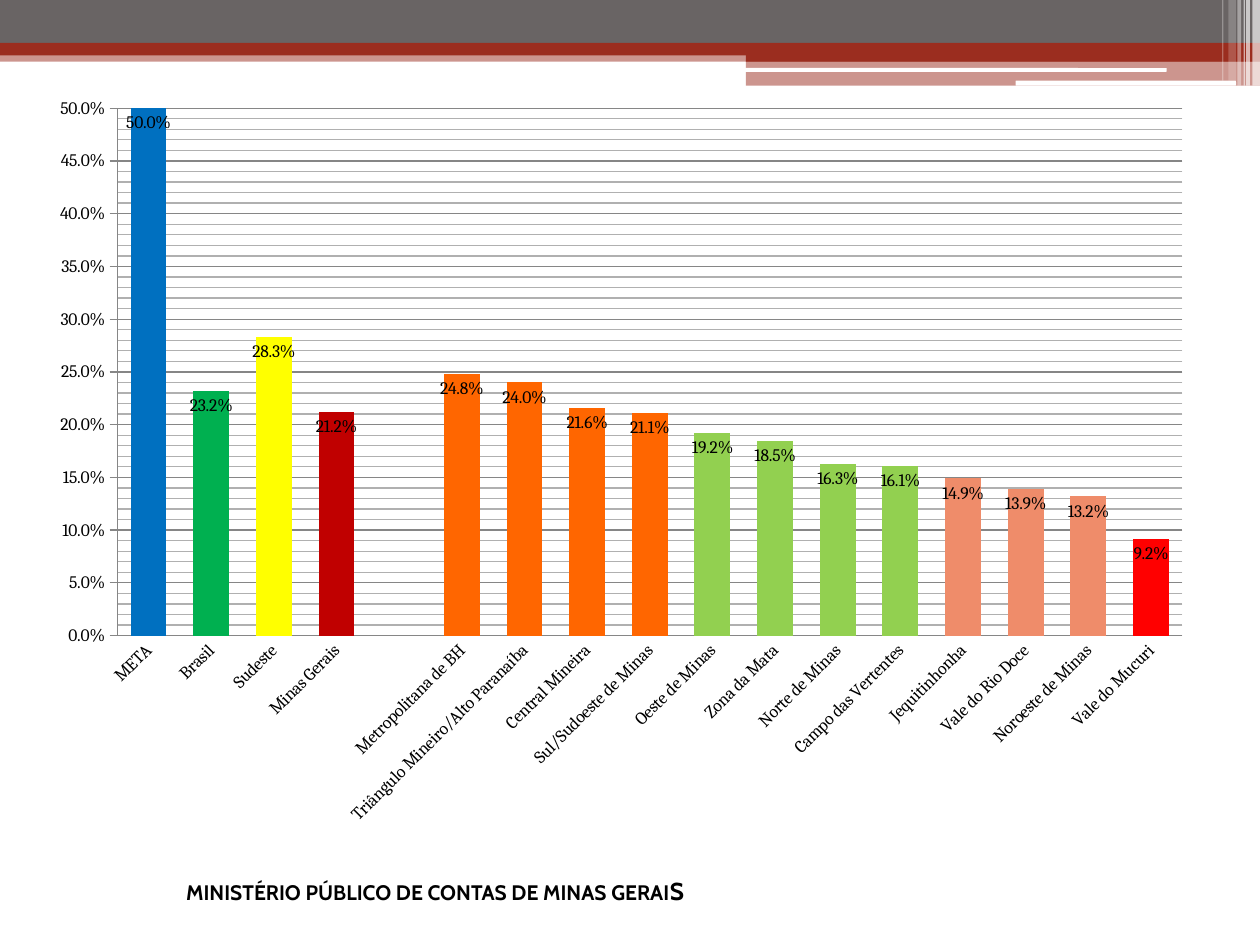
import pptx
import pptx.util
import pptx.oxml
import pptx.oxml.ns
import pptx.chart.data
import pptx.dml.color
import pptx.enum.chart
import pptx.enum.shapes
from dataclasses import dataclass
from pptx.util import Inches


@dataclass(frozen=True)
class Theme:
    gray: str = "696464"
    red: str = "9B2D1F"
    white: str = "FFFFFF"
    black: str = "000000"
    axis: str = "868686"
    minor_grid: str = "B0B0B0"
    chart_font: str = "Cambria"
    footer_font: str = "Cabin"
    chart_size: int = 10
    footer_size: int = 12
    footer_end_size: int = 14


THEME = Theme()

# Content: (region, share, bar colour)
BLUE, GREEN, YELLOW, CRIMSON = "0070C0", "00B050", "FFFF00", "C00000"
ORANGE, LIME, SALMON, RED = "FF6600", "92D050", "EF8C6A", "FF0000"
REGIONS = [
    ("META", 0.5, BLUE),
    ("Brasil", 0.232, GREEN),
    ("Sudeste", 0.283, YELLOW),
    ("Minas Gerais", 0.212, CRIMSON),
    ("", None, ORANGE),
    ("Metropolitana de BH", 0.248, ORANGE),
    ("Triângulo Mineiro/Alto Paranaíba", 0.24, ORANGE),
    ("Central Mineira", 0.216, ORANGE),
    ("Sul/Sudoeste de Minas", 0.211, ORANGE),
    ("Oeste de Minas", 0.192, LIME),
    ("Zona da Mata", 0.185, LIME),
    ("Norte de Minas", 0.163, LIME),
    ("Campo das Vertentes", 0.161, LIME),
    ("Jequitinhonha", 0.149, SALMON),
    ("Vale do Rio Doce", 0.139, SALMON),
    ("Noroeste de Minas", 0.132, SALMON),
    ("Vale do Mucuri", 0.092, RED),
]
FOOTER = [
    ("MINISTÉRIO PÚBLICO DE CONTAS DE MINAS GERAI", THEME.footer_size),
    ("S", THEME.footer_end_size),
]

# Header bands: (left, top, width, height, colour, opacity %, rounded)
BANDS = [
    (0, 0.4, 10, 0.09, THEME.red, 50, False),
    (0, 0, 10, 0.34, THEME.gray, 100, False),
    (0, 0.34, 10, 0.1, THEME.red, 100, False),
    (5.92, 0.39, 4.08, 0.1, THEME.red, 100, False),
    (5.92, 0.48, 4.08, 0.2, THEME.red, 50, False),
    (5.91, 0.54, 3.35, 0.03, THEME.white, 100, True),
    (8.06, 0.64, 1.75, 0.04, THEME.white, 100, True),
]
# Vertical stripes at the right edge: (left, width, height, opacity %)
STRIPES = [
    (9.94, 0.06, 0.68, 65),
    (9.89, 0.03, 0.68, 65),
    (9.87, 0.01, 0.68, 60),
    (9.82, 0.03, 0.68, 40),
    (9.75, 0.06, 0.64, 20),
    (9.7, 0.01, 0.64, 30),
]
# Plot area as fractions of the chart frame
PLOT = {"x": 0.07, "y": 0.03, "w": 0.91, "h": 0.7}


def rgb(value):
    return pptx.dml.color.RGBColor.from_string(value)


def paint(fill, color):
    fill.solid()
    fill.fore_color.rgb = rgb(color)


def style_line(line, color, width=0.75):
    line.color.rgb = rgb(color)
    line.width = pptx.util.Pt(width)


def style_font(font, name, size):
    font.name = name
    font.size = pptx.util.Pt(size)
    font.color.rgb = rgb(THEME.black)


def add_band(page, left, top, width, height, color, opacity, rounded=False):
    kinds = pptx.enum.shapes.MSO_SHAPE
    kind = kinds.ROUNDED_RECTANGLE if rounded else kinds.RECTANGLE
    band = page.shapes.add_shape(kind, *map(Inches, (left, top, width, height)))
    band.shadow.inherit = False
    band.line.fill.background()
    paint(band.fill, color)
    if opacity < 100:
        fill_color = band._element.spPr.find(".//" + pptx.oxml.ns.qn("a:srgbClr"))
        alpha = pptx.oxml.parse_xml(
            f'<a:alpha {pptx.oxml.ns.nsdecls("a")} val="{opacity * 1000}"/>')
        fill_color.append(alpha)


def place_plot(chart):
    area = chart._chartSpace.chart.plotArea
    for old in area.findall(pptx.oxml.ns.qn("c:layout")):
        area.remove(old)
    modes = '<c:xMode val="edge"/><c:yMode val="edge"/>'
    sizes = "".join(f'<c:{key} val="{value}"/>' for key, value in PLOT.items())
    area.insert(0, pptx.oxml.parse_xml(
        f'<c:layout {pptx.oxml.ns.nsdecls("c")}><c:manualLayout>'
        f'<c:layoutTarget val="inner"/>{modes}{sizes}</c:manualLayout></c:layout>'))


def style_minor_grid(axis, color, width=0.75):
    grid = axis._element.find(pptx.oxml.ns.qn("c:minorGridlines"))
    grid.append(pptx.oxml.parse_xml(
        f'<c:spPr {pptx.oxml.ns.nsdecls("c", "a")}>'
        f'<a:ln w="{pptx.util.Pt(width)}"><a:solidFill><a:srgbClr val="{color}"/>'
        '</a:solidFill></a:ln></c:spPr>'))


def add_region_chart(page):
    enums = pptx.enum.chart
    data = pptx.chart.data.CategoryChartData(number_format="0.0%")
    data.categories = [name for name, _, _ in REGIONS]
    data.add_series("Series 1", [share for _, share, _ in REGIONS])
    chart = page.shapes.add_chart(
        enums.XL_CHART_TYPE.COLUMN_STACKED,
        Inches(0.28), Inches(0.68), Inches(9.29), Inches(5.98), data).chart
    chart.has_legend = False
    chart.has_title = False
    style_font(chart.font, THEME.chart_font, THEME.chart_size)
    place_plot(chart)

    # Bars and labels
    plot = chart.plots[0]
    plot.gap_width, plot.overlap = 75, 100
    plot.vary_by_categories = False
    series = plot.series[0]
    paint(series.format.fill, BLUE)
    for index, (_, share, color) in enumerate(REGIONS):
        if share is not None:
            paint(series.points[index].format.fill, color)
    labels = series.data_labels
    labels.show_value = True
    labels.position = enums.XL_LABEL_POSITION.INSIDE_END
    labels.number_format, labels.number_format_is_linked = "0.0%", False
    style_font(labels.font, THEME.chart_font, THEME.chart_size)

    # Axes
    regions, shares = chart.category_axis, chart.value_axis
    for axis in (regions, shares):
        style_line(axis.format.line, THEME.axis)
        style_font(axis.tick_labels.font, THEME.chart_font, THEME.chart_size)
    regions.major_tick_mark = enums.XL_TICK_MARK.NONE
    regions._element.txPr.bodyPr.set("rot", str(-45 * 60000))
    shares.minimum_scale, shares.maximum_scale = 0, 0.5
    shares.major_unit, shares.minor_unit = 0.05, 0.01
    shares.major_tick_mark = enums.XL_TICK_MARK.CROSS
    shares.tick_labels.number_format = "0.0%"
    shares.tick_labels.number_format_is_linked = False
    shares.has_major_gridlines = shares.has_minor_gridlines = True
    style_line(shares.major_gridlines.format.line, THEME.axis)
    style_minor_grid(shares, THEME.minor_grid)


def add_footer(page):
    box = page.shapes.add_textbox(
        Inches(1.38), Inches(6.9), Inches(7.64), Inches(0.34))
    box.text_frame.word_wrap = True
    para = box.text_frame.paragraphs[0]
    for text, size in FOOTER:
        span = para.add_run()
        span.text = text
        style_font(span.font, THEME.footer_font, size)
        span.font.bold = True


def main():
    deck = pptx.Presentation()
    deck.slide_width, deck.slide_height = Inches(10), Inches(7.5)
    page = deck.slides.add_slide(deck.slide_layouts[6])
    for band in BANDS:
        add_band(page, *band)
    for left, width, height, opacity in STRIPES:
        add_band(page, left, 0, width, height, THEME.white, opacity)
    add_footer(page)
    add_region_chart(page)
    deck.save("out.pptx")


if __name__ == "__main__":
    main()
